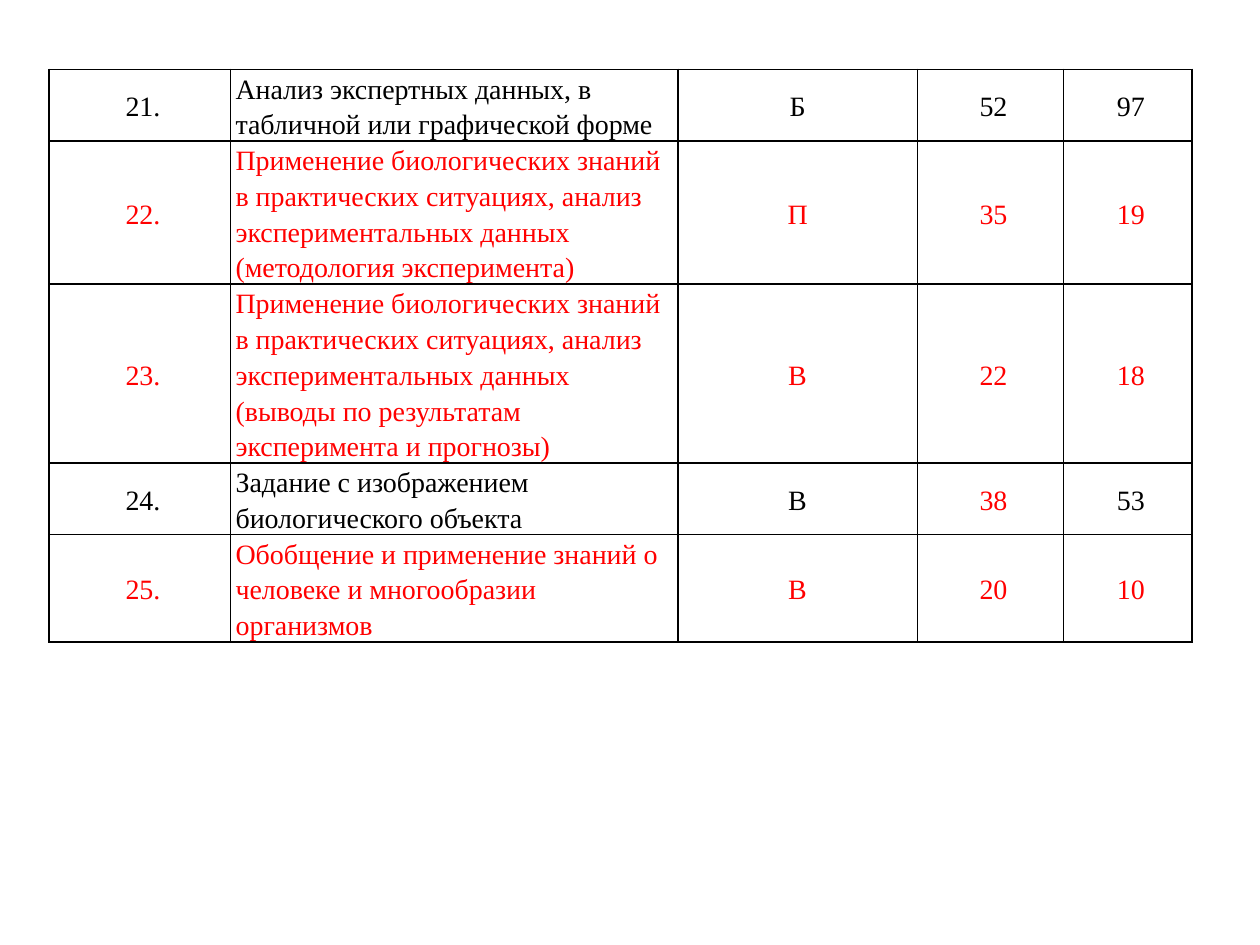
from dataclasses import dataclass

from lxml import etree
from pptx import Presentation
from pptx.dml.color import RGBColor
from pptx.enum import text
from pptx.oxml import ns
from pptx.util import Inches, Pt


@dataclass(frozen=True)
class Theme:
    font: str = "Times New Roman"
    size: Pt = Pt(16)
    spacing: float = 1.15
    black: RGBColor = RGBColor(0, 0, 0)
    red: RGBColor = RGBColor(255, 0, 0)
    border: Pt = Pt(1)


@dataclass(frozen=True)
class Column:
    width: Inches
    indent: Inches
    align: text.PP_ALIGN = text.PP_ALIGN.CENTER


@dataclass(frozen=True)
class Task:
    values: tuple[str, str, str, str, str]
    red_columns: tuple[int, ...] = ()


THEME = Theme()
ROW_HEIGHT = Inches(0.21)  # minimum; rows grow to fit their text
ALL_COLUMNS = (0, 1, 2, 3, 4)
APPLICATION = ("Применение биологических знаний в практических ситуациях, "
               "анализ экспериментальных данных")

COLUMNS = [
    Column(Inches(1.44), Inches(0.05)),
    Column(Inches(3.55), Inches(0), text.PP_ALIGN.LEFT),
    Column(Inches(1.9), Inches(-0.08)),
    Column(Inches(1.16), Inches(0.05)),
    Column(Inches(1.02), Inches(0.05)),
]

TASKS = [
    Task(("21.", "Анализ экспертных данных, в табличной или графической форме",
          "Б", "52", "97")),
    Task(("22.", f"{APPLICATION} (методология эксперимента)",
          "П", "35", "19"), ALL_COLUMNS),
    Task(("23.", f"{APPLICATION} (выводы по результатам эксперимента и прогнозы)",
          "В", "22", "18"), ALL_COLUMNS),
    Task(("24.", "Задание с изображением биологического объекта",
          "В", "38", "53"), (3,)),
    Task(("25.", "Обобщение и применение знаний о человеке и многообразии организмов",
          "В", "20", "10"), ALL_COLUMNS),
]


def add_borders(cell) -> None:
    tc_pr = cell._tc.get_or_add_tcPr()
    for i, side in enumerate(("lnL", "lnR", "lnT", "lnB")):
        ln = etree.Element(ns.qn(f"a:{side}"), w=str(THEME.border))
        fill = etree.SubElement(ln, ns.qn("a:solidFill"))
        etree.SubElement(fill, ns.qn("a:srgbClr"), val=str(THEME.black))
        tc_pr.insert(i, ln)


def fill_cell(cell, value: str, column: Column, color: RGBColor) -> None:
    cell.fill.background()
    add_borders(cell)
    cell.vertical_anchor = text.MSO_ANCHOR.MIDDLE
    cell.margin_left = cell.margin_right = Inches(0.04)
    cell.margin_top = cell.margin_bottom = Inches(0)
    cell.text_frame.text = value
    p = cell.text_frame.paragraphs[0]
    p.alignment = column.align
    p.line_spacing = THEME.spacing
    p_pr = p._p.get_or_add_pPr()
    p_pr.set("marL", "0")
    p_pr.set("indent", str(column.indent))
    font = p.runs[0].font
    font.name, font.size = THEME.font, THEME.size
    font.color.rgb = color


def add_task_table(s) -> None:
    width = sum(column.width for column in COLUMNS)
    height = Inches(4.91)
    frame = s.shapes.add_table(len(TASKS), len(COLUMNS), Inches(0.39), Inches(0.55),
                               width, height)
    table = frame.table
    table.first_row = table.horz_banding = False
    for i, column in enumerate(COLUMNS):
        table.columns[i].width = column.width
    for i, task in enumerate(TASKS):
        table.rows[i].height = ROW_HEIGHT
        for j, (value, column) in enumerate(zip(task.values, COLUMNS)):
            color = THEME.red if j in task.red_columns else THEME.black
            fill_cell(table.cell(i, j), value, column, color)
    frame.height = height


def main() -> None:
    prs = Presentation()
    prs.slide_width, prs.slide_height = Inches(10), Inches(7.5)
    s = prs.slides.add_slide(prs.slide_layouts[6])
    add_task_table(s)
    prs.save("out.pptx")


if __name__ == "__main__":
    main()
